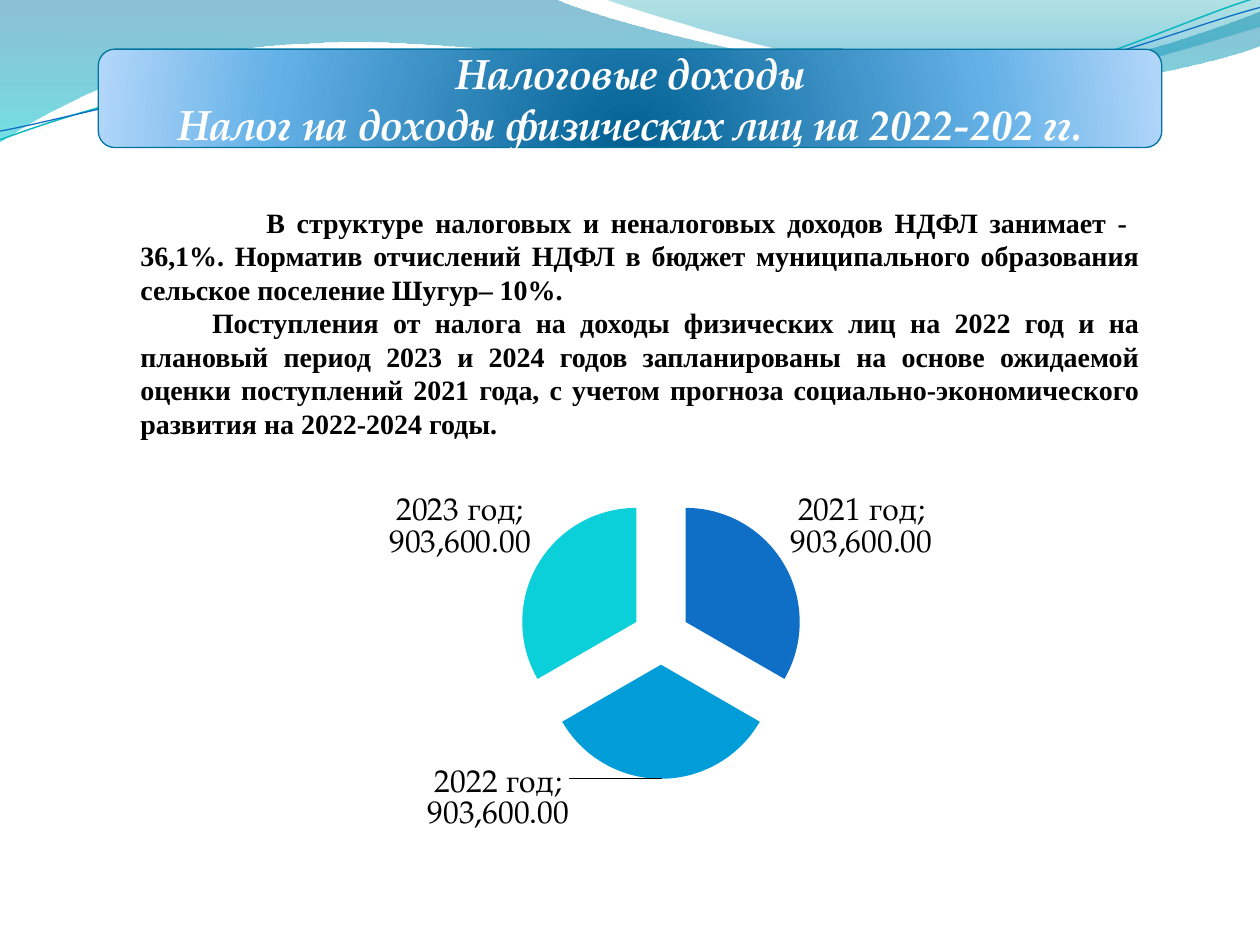
"""Build a slide on personal income tax revenue with a banner, a text and an exploded pie chart."""

from dataclasses import dataclass
from math import cos, radians, sin
from typing import NamedTuple, Optional

from lxml.etree import SubElement
from pptx import Presentation
from pptx.chart.data import CategoryChartData
from pptx.dml.color import RGBColor
from pptx.enum.chart import XL_CHART_TYPE, XL_LABEL_POSITION
from pptx.enum.shapes import MSO_SHAPE
from pptx.enum.text import MSO_ANCHOR, MSO_AUTO_SIZE, PP_ALIGN
from pptx.oxml import parse_xml
from pptx.oxml.ns import nsdecls, qn
from pptx.util import Pt


class Stop(NamedTuple):
    position: int
    color: str
    opacity: int = 100


class Frame(NamedTuple):
    left: float
    top: float
    width: float
    height: float

    def lengths(self) -> list:
        return [Pt(value) for value in self]


class Paragraph(NamedTuple):
    text: str
    indent: float = 0


@dataclass(frozen=True)
class Theme:
    display_font: str = "TeX Gyre Pagella"
    body_font: str = "Times New Roman"
    title_size: int = 24
    chart_size: int = 18
    body_size: int = 16
    white: str = "FFFFFF"
    black: str = "000000"
    outline: str = "0074A1"
    slices: tuple = ("0F6FC6", "009DD9", "0BD0D9")
    banner: tuple = (Stop(0, "006091"), Stop(68, "64B1E7"), Stop(100, "B1D6F9"))


@dataclass(frozen=True)
class Wave:
    start: tuple
    segments: tuple
    stops: tuple = ()
    line: Optional[str] = None
    line_width: float = 0
    tilt: float = 0
    center: tuple = (0, 0)


THEME = Theme()
DOWNWARD = '<a:lin ang="5400000" scaled="1"/>'
RADIAL = '<a:path path="circle"><a:fillToRect l="50000" t="130000" r="50000" b="-30000"/></a:path>'
NUMBER_FORMAT = "#,##0.00"

WAVES = (
    Wave((0, 0), (
        ((316.8, -0.7),),
        ((342.7, 12.2), (478.1, 45.4), (545.8, 45.4)),
        ((614.2, 45.4), (689.8, 18.7), (720, 6.5)),
        ((720.7, 25.9),),
        ((707.8, 31.7), (626.4, 54.7), (537.1, 54)),
        ((447.8, 54), (275, 20.2), (185, 24.5)),
        ((92.9, 25.9), (33.1, 59.8), (-0.7, 81.4)),
    ), stops=(Stop(0, "0074A1", 45), Stop(100, "00C6CF", 55))),
    Wave((344.9, -0.7), (
        ((366.5, 7.9), (491, 44.6), (553.7, 46.8)),
        ((616.3, 49.7), (691.9, 23), (720, 15.1)),
        ((720, 0),),
    ), stops=(Stop(0, "00A1A9", 30), Stop(80, "008BBF", 45))),
    Wave((0, 79.9), (
        ((34.6, 67), (113.8, 41), (199.4, 37.4)),
        ((284.4, 33.8), (427, 64.1), (513.4, 57.6)),
        ((599.8, 51.1), (675.4, 10.8), (718.6, -1.4)),
    ), line="0AB8BF", line_width=0.85, tilt=-2.7, center=(359.3, 41.4)),
    Wave((0, 74.9), (
        ((33.8, 69.1), (118.1, 43.9), (203.8, 40.3)),
        ((290.2, 36.7), (429.8, 60.5), (516.2, 54)),
        ((601.9, 48.2), (677.5, 15.1), (720, 4.3)),
    ), line="0F6FC6", line_width=0.75, tilt=-2.7, center=(359.6, 42.5)),
)

TITLE = (
    Paragraph("Налоговые доходы"),
    Paragraph("Налог на доходы физических лиц на 2022-202 гг."),
)
BODY = (
    Paragraph("В структуре налоговых и неналоговых доходов НДФЛ занимает -  36,1%. Норматив отчислений "
              "НДФЛ в бюджет муниципального образования сельское поселение Шугур– 10%.", 72),
    Paragraph("Поступления от налога на доходы физических лиц на 2022 год и на плановый период 2023 и 2024 "
              "годов запланированы на основе ожидаемой оценки поступлений 2021 года, с учетом прогноза "
              "социально-экономического развития на 2022-2024 годы.", 41),
)
REVENUE = {"2021 год": 903600, "2022 год": 903600, "2023 год": 903600}


def fill_gradient(shape, stops: tuple, direction: str) -> None:
    stop_xml = "".join(
        f'<a:gs pos="{stop.position * 1000}"><a:srgbClr val="{stop.color}">'
        f'<a:alpha val="{stop.opacity * 1000}"/></a:srgbClr></a:gs>' for stop in stops)
    gradient = parse_xml(f'<a:gradFill {nsdecls("a")} rotWithShape="1"><a:gsLst>{stop_xml}</a:gsLst>'
                         f'{direction}</a:gradFill>')
    shape.fill.background()
    old_fill = shape.element.spPr.find(qn("a:noFill"))
    shape.element.spPr.replace(old_fill, gradient)


def turn(point: tuple, center: tuple, degrees: float) -> tuple:
    angle = radians(degrees)
    across, down = point[0] - center[0], point[1] - center[1]
    return (center[0] + across * cos(angle) - down * sin(angle),
            center[1] + across * sin(angle) + down * cos(angle))


def bend_segments(shape, segments: tuple) -> None:
    steps = iter(list(shape.element.iter(qn("a:lnTo"))))
    for segment in segments:
        members = [next(steps) for _ in segment]
        if len(members) == 3:
            curve = parse_xml(f'<a:cubicBezTo {nsdecls("a")}/>')
            members[0].addprevious(curve)
            for member in members:
                curve.append(member[0])
                member.getparent().remove(member)


def draw_wave(page, wave: Wave) -> None:
    points = [wave.start] + [point for segment in wave.segments for point in segment]
    outline = [(Pt(x), Pt(y)) for x, y in (turn(point, wave.center, -wave.tilt) for point in points)]
    builder = page.shapes.build_freeform(*outline[0])
    builder.add_line_segments(outline[1:], close=bool(wave.stops))
    shape = builder.convert_to_shape()
    bend_segments(shape, wave.segments)
    shape.rotation = wave.tilt
    shape.shadow.inherit = False
    if wave.stops:
        fill_gradient(shape, wave.stops, DOWNWARD)
        shape.line.fill.background()
    else:
        shape.fill.background()
        shape.line.color.rgb = RGBColor.from_string(wave.line)
        shape.line.width = Pt(wave.line_width)


def write_text(box, paragraphs: tuple, align, font: str, size: int, color: str, italic: bool = False) -> None:
    box.text_frame.word_wrap = True
    box.text_frame.text = "\n".join(item.text for item in paragraphs)
    for para, item in zip(box.text_frame.paragraphs, paragraphs):
        para.alignment = align
        if item.indent:
            para._p.get_or_add_pPr().set("indent", str(Pt(item.indent)))
        for span in para.runs:
            span.font.name, span.font.size = font, Pt(size)
            span.font.bold, span.font.italic = True, italic
            span.font.color.rgb = RGBColor.from_string(color)


def draw_banner(page, frame: Frame) -> None:
    banner = page.shapes.add_shape(MSO_SHAPE.ROUNDED_RECTANGLE, *frame.lengths())
    banner.shadow.inherit = False
    fill_gradient(banner, THEME.banner, RADIAL)
    banner.line.color.rgb = RGBColor.from_string(THEME.outline)
    banner.line.width = Pt(0.75)
    banner.text_frame.vertical_anchor = MSO_ANCHOR.MIDDLE
    write_text(banner, TITLE, PP_ALIGN.CENTER, THEME.display_font, THEME.title_size, THEME.white, italic=True)


def draw_body(page, frame: Frame) -> None:
    box = page.shapes.add_textbox(*frame.lengths())
    write_text(box, BODY, PP_ALIGN.JUSTIFY, THEME.body_font, THEME.body_size, THEME.black)
    box.text_frame.auto_size = MSO_AUTO_SIZE.SHAPE_TO_FIT_TEXT


def add_value(parent, tag: str, value: str) -> None:
    SubElement(parent, qn(tag), val=value)


def draw_pie(page, frame: Frame) -> None:
    data = CategoryChartData(number_format=NUMBER_FORMAT)
    data.categories = list(REVENUE)
    data.add_series("Series 1", list(REVENUE.values()))
    chart = page.shapes.add_chart(XL_CHART_TYPE.PIE, *frame.lengths(), data).chart
    chart.has_title = chart.has_legend = False
    chart.font.name, chart.font.size = THEME.display_font, Pt(THEME.chart_size)
    chart.font.color.rgb = RGBColor.from_string(THEME.black)
    plot = chart.plots[0]
    plot.vary_by_categories = True
    series = plot.series[0]
    for index, color in enumerate(THEME.slices):
        fill = series.points[index].format.fill
        fill.solid()
        fill.fore_color.rgb = RGBColor.from_string(color)
    series._element.find(qn("c:tx")).addnext(parse_xml(f'<c:explosion {nsdecls("c")} val="25"/>'))

    labels = series.data_labels
    labels.show_value = labels.show_category_name = True
    labels.number_format, labels.number_format_is_linked = NUMBER_FORMAT, False
    labels.position = XL_LABEL_POSITION.OUTSIDE_END
    separator = parse_xml(f'<c:separator {nsdecls("c")} xml:space="preserve">; </c:separator>')
    labels._element.find(qn("c:showBubbleSize")).addnext(separator)
    moved = parse_xml(
        f'<c:dLbl {nsdecls("c")}><c:idx val="1"/><c:layout><c:manualLayout><c:x val="-0.18"/><c:y val="-0.04"/>'
        f'</c:manualLayout></c:layout><c:numFmt formatCode="{NUMBER_FORMAT}" sourceLinked="0"/></c:dLbl>')
    add_value(moved, "c:dLblPos", "outEnd")
    for name in ("LegendKey", "Val", "CatName", "SerName", "Percent", "BubbleSize"):
        add_value(moved, f"c:show{name}", "1" if name in ("Val", "CatName") else "0")
    SubElement(moved, qn("c:separator")).text = "; "
    labels._element.insert(0, moved)

    area = plot._element.getparent()
    for layout in area.findall(qn("c:layout")):
        area.remove(layout)
    area.insert(0, parse_xml(
        f'<c:layout {nsdecls("c")}><c:manualLayout><c:layoutTarget val="inner"/><c:xMode val="edge"/>'
        '<c:yMode val="edge"/><c:x val="0.34"/><c:y val="0.1"/><c:w val="0.32"/><c:h val="0.69"/>'
        '</c:manualLayout></c:layout>'))


def main() -> None:
    deck = Presentation()
    deck.slide_width, deck.slide_height = Pt(720), Pt(540)
    page = deck.slides.add_slide(deck.slide_layouts[6])
    for wave in WAVES:
        draw_wave(page, wave)
    draw_banner(page, Frame(56.2, 28.1, 607.7, 56.2))
    draw_body(page, Frame(73.1, 113.6, 585.2, 143.3))
    draw_pie(page, Frame(120, 258.5, 515.5, 236.2))
    deck.save("out.pptx")


if __name__ == "__main__":
    main()
